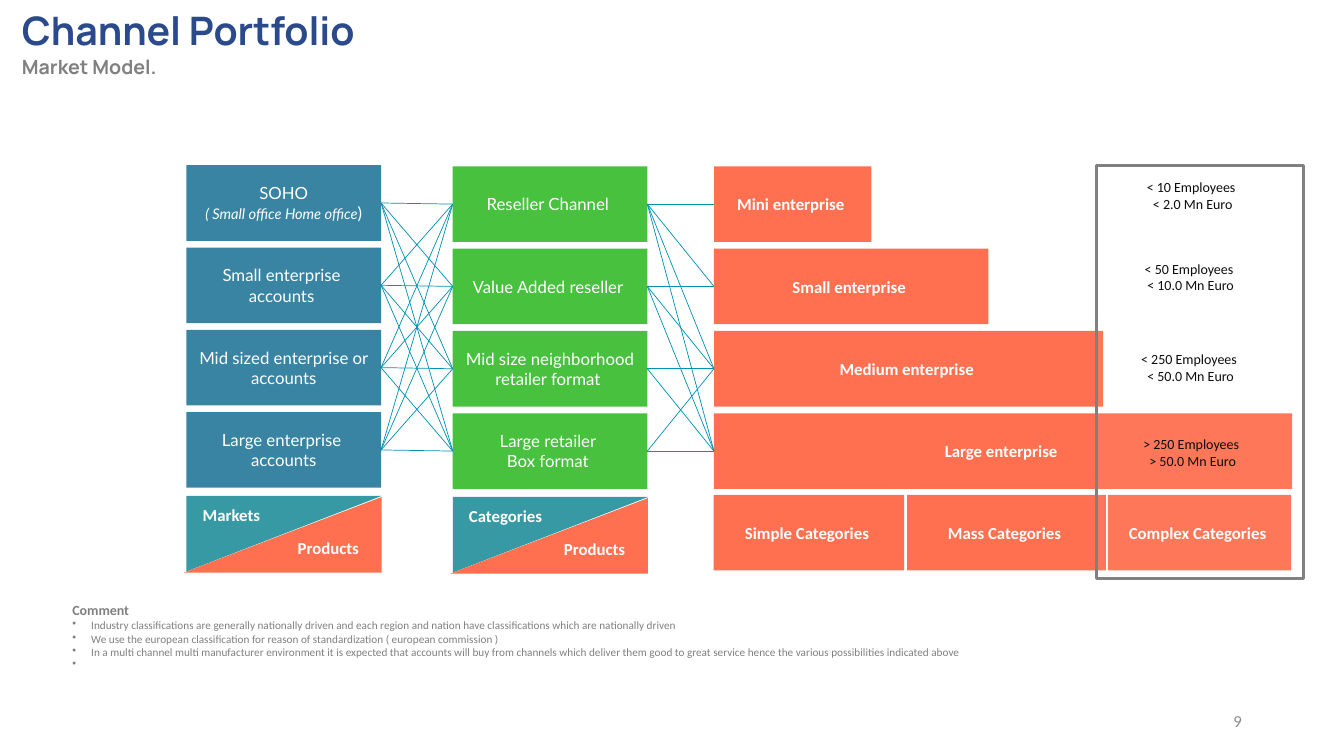
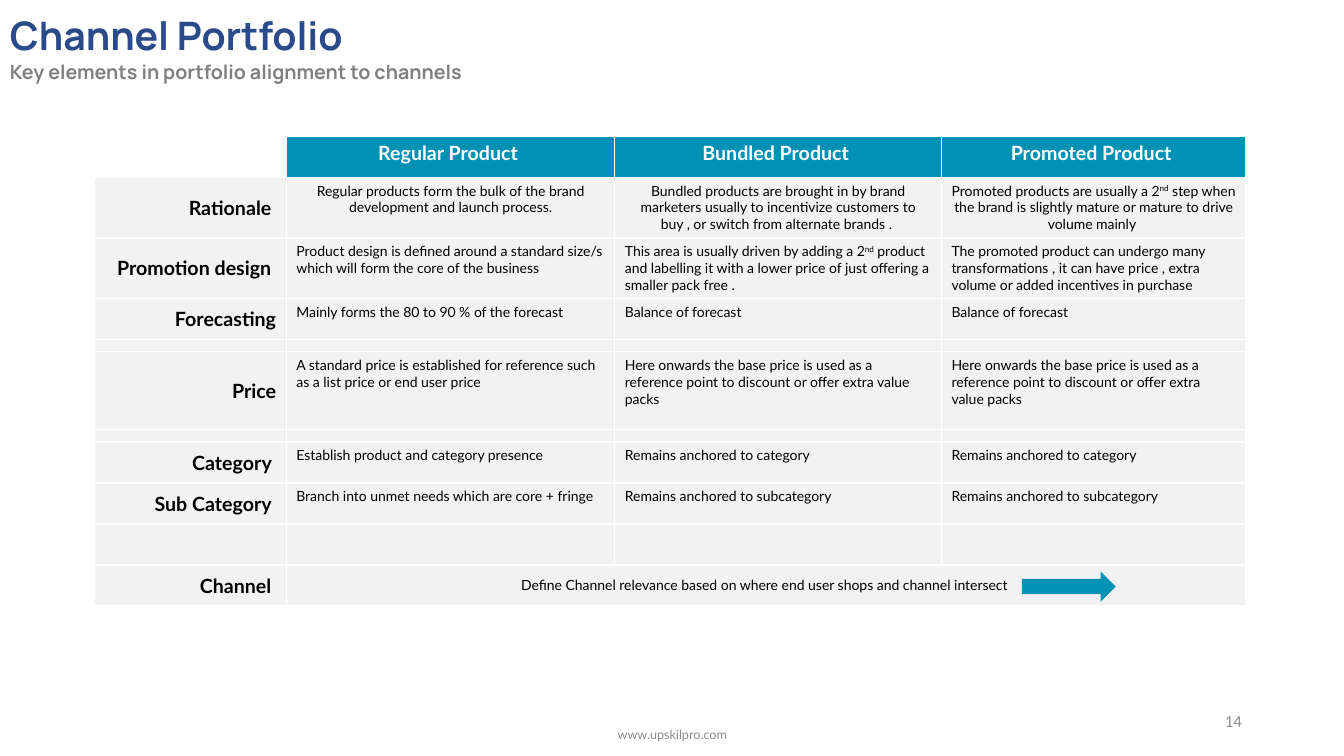
from lxml import etree
from pptx import Presentation
from pptx.dml.color import RGBColor
from pptx.enum import shapes, text
from pptx.oxml.ns import qn
from pptx.util import Pt

NAVY, GRAY, FOOTER_GRAY, PALE = "2A4A8B", "808080", "8C8C8C", "F2F2F2"
BLUE, GREEN, ORANGE, TEAL, CYAN = "3984A3", "48C13F", "FE7050", "3799A3", "0091B5"
WHITE, BLACK = "FFFFFF", "000000"
LEFT, CENTER, RIGHT = text.PP_ALIGN.LEFT, text.PP_ALIGN.CENTER, text.PP_ALIGN.RIGHT
TOP, MIDDLE = text.MSO_ANCHOR.TOP, text.MSO_ANCHOR.MIDDLE
SHAPE = shapes.MSO_SHAPE

# Market model: a paragraph is a string or a list of runs, a run a string or (string, format)
MARKETS = [
    ["SOHO", [("( Small office Home office", {"size": 10.5, "italic": True}), ")"]],
    ["Small enterprise ", "accounts "],
    ["Mid sized enterprise or accounts"],
    ["Large enterprise ", "accounts"],
]
CHANNELS = [
    ["Reseller Channel "],
    ["Value Added reseller "],
    ["Mid size neighborhood retailer format "],
    ["Large retailer ", "Box format "],
]
# name, width, number of channels that serve it, size limits, left and top of the limits
ENTERPRISES = [
    ("Mini enterprise ", 112.5, 1, ["< 10 Employees ", "< 2.0 Mn Euro"], 795, 123.8),
    ("Small enterprise ", 196, 2, ["< 50 Employees ", "< 10.0 Mn Euro"], 793.5, 182.2),
    ("Medium enterprise ", 278, 4, ["< 250 Employees ", "< 50.0 Mn Euro"], 793.5, 247),
    ("Large enterprise ", 413, 4, ["> 250 Employees ", "> 50.0 Mn Euro"], 795, 307.4),
]
CATEGORIES = [
    ("Simple Categories ", 509.8, 136),
    ("Mass Categories ", 648, 142),
    ("Complex Categories ", 791.3, 131),
]
COMMENTS = [
    "Industry classifications are generally nationally driven and each region and nation "
    "have classifications which are nationally driven",
    "We use the european classification for reason of standardization ( european commission )",
    "In a multi channel multi manufacturer environment it is expected that accounts will buy "
    "from channels which deliver them good to great service hence the various possibilities "
    "indicated above",
    " ",
]
MARKET_X, CHANNEL_X, ENTERPRISE_X = 133.2, 323.4, 510
MARKET_Y, CHANNEL_Y = 118, 118.8
BOX_W, BOX_H, ROW_PITCH = 139, 54, 58.8

# Portfolio table
SUPERSCRIPT = ("nd", {"baseline": 30000})
DISCOUNT = "Here onwards the base price is used as a reference point to discount or offer extra value packs"
COLUMN_WIDTHS = [136.8, 234.7, 233.3, 217.4]
EMPTY = ["", "", "", ""]
TABLE_ROWS = [  # height, cells
    (29.5, ["", "Regular Product ", "Bundled Product ", "Promoted Product "]),
    (43.2, [
        "Rationale ",
        "Regular products form the bulk of the brand development and launch process.",
        "Bundled products are brought in by brand marketers usually to incentivize customers "
        "to buy , or switch from alternate brands . ",
        ["Promoted products are usually a 2", SUPERSCRIPT,
         " step when the brand is slightly mature or mature to drive volume mainly "]]),
    (43.2, [
        "Promotion design ",
        "Product design is defined around a standard size/s which will form the core of the business",
        ["This area is usually driven by adding a 2", SUPERSCRIPT,
         " product and labelling it with a lower price of just offering a smaller pack free ."],
        "The promoted product can undergo many transformations , it can have price , extra "
        "volume or added incentives in purchase"]),
    (29.3, ["Forecasting", "Mainly forms the 80 to 90 % of the forecast",
            "Balance of forecast", "Balance of forecast"]),
    (8.8, EMPTY),
    (55.7, ["Price",
            "A standard price is established for reference such as a list price or end user price",
            DISCOUNT, DISCOUNT]),
    (8.8, EMPTY),
    (29.3, ["Category ", "Establish product and category presence",
            "Remains anchored to category", "Remains anchored to category"]),
    (29.3, ["Sub Category ", "Branch into unmet needs which are core + fringe",
            "Remains anchored to subcategory", "Remains anchored to subcategory"]),
    (29.3, EMPTY),
    (29.3, ["Channel ", "Define Channel relevance based on where end user shops and "
            "channel intersect ", "", ""]),
]


def rgb(value):
    return RGBColor.from_string(value)


def add_paragraph(frame, content, size=12, font="Calibri", color=BLACK, bold=False,
                  align=LEFT, bullet=False, space_before=0):
    """Fill the frame's empty first paragraph, or append one."""
    paragraph = frame.paragraphs[0]
    if paragraph.runs:
        paragraph = frame.add_paragraph()
        paragraph.space_before = Pt(space_before)
    paragraph.alignment = align
    if bullet:
        properties = paragraph._p.get_or_add_pPr()
        properties.set("marL", str(Pt(13.5)))
        properties.set("indent", str(-Pt(13.5)))
        etree.SubElement(properties, qn("a:buChar"), char="•")
    for part in [content] if isinstance(content, str) else content:
        words, special = (part, {}) if isinstance(part, str) else part
        run = paragraph.add_run()
        run.text = words
        run.font.size = Pt(special.get("size", size))
        run.font.name = font
        run.font.bold = bold
        run.font.italic = special.get("italic", False)
        run.font.color.rgb = rgb(color)
        if "baseline" in special:
            run._r.get_or_add_rPr().set("baseline", str(special["baseline"]))


def add_text(slide, box, paragraphs, anchor=TOP, **style):
    frame = slide.shapes.add_textbox(*map(Pt, box)).text_frame
    frame.word_wrap = True
    frame.vertical_anchor = anchor
    for content in paragraphs:
        add_paragraph(frame, content, **style)
    return frame


def add_block(slide, box, fill, paragraphs=(), kind=SHAPE.RECTANGLE, inset=None, flip=None, **style):
    shape = slide.shapes.add_shape(kind, *map(Pt, box))
    shape.shadow.inherit = False
    shape.fill.solid()
    shape.fill.fore_color.rgb = rgb(fill)
    shape.line.fill.background()
    if flip:
        shape.element.spPr.get_or_add_xfrm().set(flip, "1")
    frame = shape.text_frame
    frame.vertical_anchor = MIDDLE
    if inset is not None:
        frame.margin_left = frame.margin_right = frame.margin_top = frame.margin_bottom = Pt(inset)
    for content in paragraphs:
        add_paragraph(frame, content, color=WHITE, align=CENTER, **style)
    return shape


def connect(slide, start, end):
    """Join the right side of start to the left side of end."""
    line = slide.shapes.add_connector(shapes.MSO_CONNECTOR.STRAIGHT, 0, 0, 0, 0)
    line.begin_connect(start, 3)
    line.end_connect(end, 1)
    line.line.color.rgb = rgb(CYAN)
    line.line.width = Pt(0.5)
    etree.SubElement(line.element.spPr, qn("a:effectLst"))


def add_slide(presentation, subtitle, number, title_x, title_y):
    slide = presentation.slides.add_slide(presentation.slide_layouts[6])
    frame = add_text(slide, (title_x, title_y, 620, 60), ["Channel Portfolio"],
                     size=28, font="Manrope", color=NAVY, bold=True)
    add_paragraph(frame, subtitle, size=14, font="Manrope", color=GRAY, bold=True, space_before=1.2)
    add_text(slide, (678.2, 500.4, 216, 28.8), [number], anchor=MIDDLE,
             color=FOOTER_GRAY, align=RIGHT)
    return slide


def add_legend(slide, x, y, name):
    """Split box: name in the upper left half, products in the lower right."""
    add_block(slide, (x, y + 1, BOX_W + 0.5, BOX_H), TEAL, kind=SHAPE.RIGHT_TRIANGLE, flip="flipV")
    add_block(slide, (x - 2, y + 1.8, BOX_W + 2.5, BOX_H), ORANGE,
              kind=SHAPE.RIGHT_TRIANGLE, flip="flipH")
    for label, dx, dy in [(name, 4.5, 4), ("Products", 72.3, 27)]:
        add_text(slide, (x + dx, y + dy, 70, 22), [label], color=WHITE, bold=True)


def add_column(slide, x, y, fill, labels, legend):
    add_legend(slide, x, y + len(labels) * ROW_PITCH, legend)
    return [add_block(slide, (x, y + row * ROW_PITCH, BOX_W, BOX_H), fill, label,
                      inset=0, font="Lato") for row, label in enumerate(labels)]


def build_market_model(presentation):
    slide = add_slide(presentation, "Market Model.", "9", 8.6, 0.7)
    markets = add_column(slide, MARKET_X, MARKET_Y, BLUE, MARKETS, "Markets")
    channels = add_column(slide, CHANNEL_X, CHANNEL_Y, GREEN, CHANNELS, "Categories")
    for market in markets:
        for channel in channels:
            connect(slide, market, channel)

    for name, x, width in CATEGORIES:
        add_block(slide, (x, 353.5, width, BOX_H), ORANGE, [name], bold=True)
    for row, (name, width, served_by, limits, limit_x, limit_y) in enumerate(ENTERPRISES):
        bar = add_block(slide, (ENTERPRISE_X, CHANNEL_Y + row * ROW_PITCH, width, BOX_H),
                        ORANGE, [name], bold=True)
        for channel in channels[:served_by]:
            connect(slide, channel, bar)
        add_text(slide, (limit_x, limit_y, 113.8, 32), limits, size=10, align=CENTER)

    frame = add_text(slide, (44.6, 426.2, 846.7, 58), ["Comment"], size=10, color=GRAY, bold=True)
    for comment in COMMENTS:
        add_paragraph(frame, comment, size=8, color=GRAY, bullet=True)

    size_frame = add_block(slide, (783.4, 118.1, 147.6, 295.2), WHITE)
    size_frame.line.color.rgb = rgb(GRAY)
    size_frame.line.width = Pt(2.25)
    fill_color = size_frame.element.spPr.find(qn("a:solidFill"))[0]
    etree.SubElement(fill_color, qn("a:alpha"), val="5000")


def fill_cell(cell, content, row, column):
    header, label, channel = row == 0, column == 0, row == len(TABLE_ROWS) - 1
    cell.fill.solid()
    cell.fill.fore_color.rgb = rgb(PALE if not header else WHITE if label else CYAN)
    if not content:
        cell.margin_top = cell.margin_bottom = 0
        etree.SubElement(cell.text_frame.paragraphs[0]._p, qn("a:endParaRPr"), sz="100")
        return
    cell.vertical_anchor = MIDDLE if label or channel else TOP
    strong = header or label
    align = RIGHT if label else CENTER if row <= 1 or channel else LEFT
    add_paragraph(cell.text_frame, content, size=14 if strong else 10, font="Lato",
                  color=WHITE if header else BLACK, bold=strong, align=align)


def build_portfolio_table(presentation):
    slide = add_slide(presentation, "Key elements in portfolio alignment to channels", "14", 0, 4.3)
    add_text(slide, (318.2, 510.5, 324, 28.8), ["www.upskilpro.com"], anchor=MIDDLE,
             size=9, font="Lato", color=FOOTER_GRAY, align=CENTER)
    table = slide.shapes.add_table(
        len(TABLE_ROWS), len(COLUMN_WIDTHS), Pt(67.7), Pt(97.2),
        Pt(sum(COLUMN_WIDTHS)), Pt(sum(height for height, _ in TABLE_ROWS))).table
    table.horz_banding = False
    for column, width in enumerate(COLUMN_WIDTHS):
        table.columns[column].width = Pt(width)
    for row, (height, cells) in enumerate(TABLE_ROWS):
        table.rows[row].height = Pt(height)
        for column, content in enumerate(cells):
            fill_cell(table.cell(row, column), content, row, column)
    last = len(TABLE_ROWS) - 1
    table.cell(last, 1).merge(table.cell(last, 3))
    add_block(slide, (730, 408.2, 67, 21.6), CYAN, kind=SHAPE.RIGHT_ARROW)


def main():
    presentation = Presentation()
    presentation.slide_width, presentation.slide_height = Pt(960), Pt(540)
    build_market_model(presentation)
    build_portfolio_table(presentation)
    presentation.save("out.pptx")


if __name__ == "__main__":
    main()
